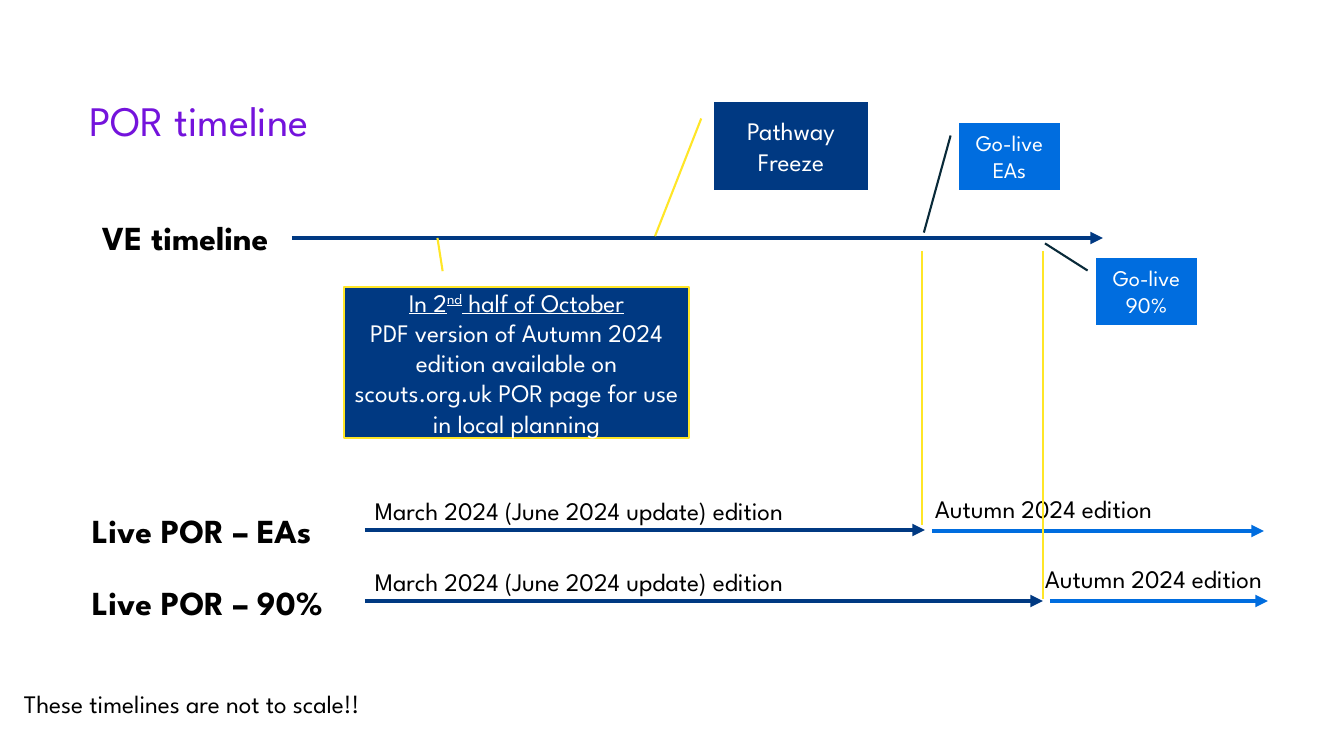
"""Build the POR timeline slide."""
from dataclasses import dataclass

from lxml.etree import SubElement
from pptx import Presentation
from pptx.dml.color import RGBColor
from pptx.enum.shapes import MSO_CONNECTOR as CONN, MSO_SHAPE as SHAPE
from pptx.enum.text import MSO_ANCHOR as ANCHOR, MSO_AUTO_SIZE as FIT, PP_ALIGN as ALIGN
from pptx.oxml.ns import qn
from pptx.util import Emu, Pt

FONT = "League Spartan"
NAVY, BLUE, YELLOW, DARK = "003982", "006DDF", "FFE627", "092A39"
PURPLE, BLACK, WHITE = "7413DC", "000000", "FFFFFF"
BREAK = "\n"


@dataclass
class Run:
    """A piece of text with its own underline and baseline."""
    text: str
    underline: bool = False
    baseline: int = 0


@dataclass
class Label:
    """A single-line text box."""
    text: str
    x: int
    y: int
    w: int
    h: int = 40
    size: int = 18
    bold: bool = False


@dataclass
class Line:
    """A straight line, with an arrowhead when it is a timeline."""
    x1: int
    y1: int
    x2: int
    y2: int
    color: str
    arrow: bool = True


@dataclass
class Callout:
    """A filled box with a leader line given by its adjustments."""
    runs: list[Run]
    x: int
    y: int
    w: int
    h: int
    adjust: tuple[float, ...]
    fill: str
    line: str
    size: int
    kind: SHAPE = SHAPE.LINE_CALLOUT_1_NO_BORDER


MARCH = "March 2024 (June 2024 update) edition"
AUTUMN = "Autumn 2024 edition"

LABELS = [
    Label("VE timeline", 92, 212, 202, 50, 24, True),
    Label("Live POR – EAs", 82, 505, 262, 50, 24, True),
    Label("Live POR – 90%", 82, 577, 271, 50, 24, True),
    Label(MARCH, 365, 490, 469),
    Label(AUTUMN, 925, 488, 263),
    Label(MARCH, 365, 561, 469),
    Label(AUTUMN, 1035, 558, 263),
    Label("These timelines are not to scale!!", 14, 683, 388),
]

LINES = [
    Line(292, 238, 1103, 238, NAVY),
    Line(365, 530, 925, 530, NAVY),
    Line(365, 601, 1043, 601, NAVY),
    Line(932, 531, 1264, 531, BLUE),
    Line(1050, 601, 1268, 601, BLUE),
    Line(922, 251, 922, 525, YELLOW, arrow=False),
    Line(1043, 251, 1043, 599, YELLOW, arrow=False),
]

OCTOBER = [
    Run("In 2", True), Run("nd", True, 30000), Run(" half of October", True), Run(BREAK),
    Run("PDF version of Autumn 2024 edition available on scouts.org.uk POR page "
        "for use in local planning"),
]

CALLOUTS = [
    Callout([Run("Go-live 90%")], 1096, 258, 101, 67,
            (0.188, -0.083, -0.218, -0.505), BLUE, DARK, 16),
    Callout([Run("Go-live EAs")], 959, 123, 101, 67,
            (0.188, -0.083, 1.637, -0.348), BLUE, DARK, 16),
    Callout([Run("Pathway Freeze")], 714, 102, 154, 88,
            (0.188, -0.083, 1.525, -0.383), NAVY, YELLOW, 18),
    Callout(OCTOBER, 344, 287, 345, 151,
            (-0.105, 0.286, -0.325, 0.271), NAVY, YELLOW, 18, SHAPE.LINE_CALLOUT_1),
]


def px(n: int) -> Emu:
    """Turn pixels into EMU."""
    return Emu(round(n * 12192000 / 1344))


def rgb(color: str) -> RGBColor:
    """Turn a hex string into a colour."""
    return RGBColor.from_string(color)


def write(sp, runs: list[Run], *, size: int, color: str, bold: bool = False,
          align=ALIGN.LEFT, anchor=ANCHOR.TOP, wrap: bool = True, fit=FIT.NONE) -> None:
    """Put formatted runs into the one paragraph of a shape."""
    tf = sp.text_frame
    tf.word_wrap, tf.auto_size, tf.vertical_anchor = wrap, fit, anchor
    p = tf.paragraphs[0]
    p.alignment = align
    for run in runs:
        if run.text == BREAK:
            p.add_line_break()
            continue
        r = p.add_run()
        r.text = run.text
        f = r.font
        f.name, f.size, f.bold, f.underline = FONT, Pt(size), bold, run.underline
        f.color.rgb = rgb(color)
        if run.baseline:
            r._r.get_or_add_rPr().set("baseline", str(run.baseline))


def add_title(slide, text: str) -> None:
    """Move and format the title placeholder."""
    sp = slide.shapes.title
    sp.left, sp.top, sp.width, sp.height = map(px, (79, 89, 426, 61))
    write(sp, [Run(text)], size=30, color=PURPLE)


def add_label(slide, label: Label) -> None:
    """Draw a label."""
    sp = slide.shapes.add_textbox(*map(px, (label.x, label.y, label.w, label.h)))
    write(sp, [Run(label.text)], size=label.size, color=BLACK, bold=label.bold,
          wrap=False, fit=FIT.SHAPE_TO_FIT_TEXT)


def add_line(slide, line: Line) -> None:
    """Draw a line or timeline arrow."""
    ends = map(px, (line.x1, line.y1, line.x2, line.y2))
    cxn = slide.shapes.add_connector(CONN.STRAIGHT, *ends)
    cxn.line.color.rgb = rgb(line.color)
    cxn.line.width = Pt(3 if line.arrow else 1.5)
    if line.arrow:
        SubElement(cxn.line._get_or_add_ln(), qn("a:tailEnd"), type="triangle")
    SubElement(cxn._element.spPr, qn("a:effectLst"))


def add_callout(slide, callout: Callout) -> None:
    """Draw a callout box with its leader line."""
    box = map(px, (callout.x, callout.y, callout.w, callout.h))
    sp = slide.shapes.add_shape(callout.kind, *box)
    for i, value in enumerate(callout.adjust):
        sp.adjustments[i] = value
    sp.shadow.inherit = False
    sp.fill.solid()
    sp.fill.fore_color.rgb = rgb(callout.fill)
    sp.line.color.rgb = rgb(callout.line)
    sp.line.width = Pt(1.5)
    write(sp, callout.runs, size=callout.size, color=WHITE,
          align=ALIGN.CENTER, anchor=ANCHOR.MIDDLE)


def main() -> None:
    """Build and save the slide."""
    prs = Presentation()
    prs.slide_width, prs.slide_height = px(1344), px(756)
    slide = prs.slides.add_slide(prs.slide_layouts[5])
    add_title(slide, "POR timeline")
    for label in LABELS:
        add_label(slide, label)
    for line in LINES:
        add_line(slide, line)
    for callout in CALLOUTS:
        add_callout(slide, callout)
    prs.save("out.pptx")


if __name__ == "__main__":
    main()
